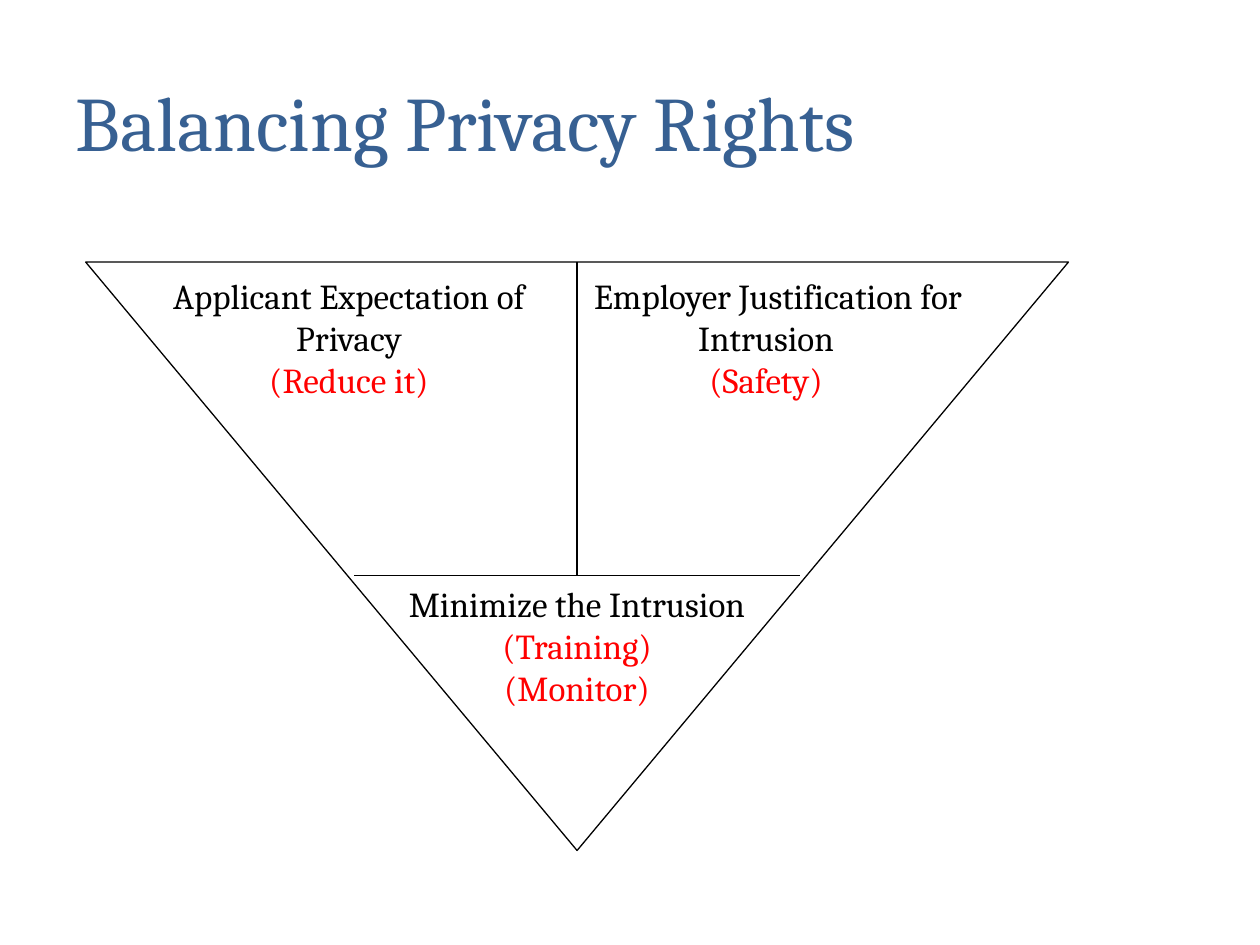
from pptx import Presentation
from pptx.dml.color import RGBColor
from pptx.enum.shapes import MSO_CONNECTOR, MSO_SHAPE
from pptx.enum.text import MSO_ANCHOR, PP_ALIGN
from pptx.oxml.ns import qn
from pptx.util import Inches, Pt
from lxml.etree import SubElement

BLUE = RGBColor(0x37, 0x60, 0x92)
BLACK = RGBColor(0, 0, 0)
RED = RGBColor(0xFF, 0, 0)
WHITE = RGBColor(0xFF, 0xFF, 0xFF)
FONT = "Cambria"

deck = Presentation()
deck.slide_width, deck.slide_height = Inches(10), Inches(7.5)
page = deck.slides.add_slide(deck.slide_layouts[5])

title = page.shapes.title
title.left, title.top = Inches(0.5), Inches(0.33)
title.width, title.height = Inches(9), Inches(1.25)
title.text_frame.text = "Balancing Privacy Rights"
title.text_frame.vertical_anchor = MSO_ANCHOR.MIDDLE
heading = title.text_frame.paragraphs[0]
heading.alignment = PP_ALIGN.LEFT
heading.font.size = Pt(44)
heading.font.name = FONT
heading.font.color.rgb = BLUE

left, top, width, height = 0.68, 2.08, 7.8, 4.67
center = left + width / 2
divider = 4.57
half_divider = 1.77

triangle = page.shapes.add_shape(
    MSO_SHAPE.ISOSCELES_TRIANGLE, Inches(left), Inches(top), Inches(width), Inches(height))
triangle.rotation = 180
triangle.shadow.inherit = False
triangle.fill.solid()
triangle.fill.fore_color.rgb = WHITE
triangle.line.color.rgb = BLACK
triangle.line.width = Pt(0.75)

for x1, y1, x2, y2 in [
    (center, top, center, divider),
    (center - half_divider, divider, center + half_divider, divider),
]:
    line = page.shapes.add_connector(
        MSO_CONNECTOR.STRAIGHT, Inches(x1), Inches(y1), Inches(x2), Inches(y2))
    line.line.color.rgb = BLACK
    line.line.width = Pt(0.75)
    SubElement(line._element.spPr, qn("a:effectLst"))

sections = [
    (1, 2.13, 1.6, 0, ["Applicant Expectation of Privacy", "(Reduce it)"]),
    (4.31, 2.13, 1.6, 0.19, ["Employer Justification for Intrusion", "(Safety)"]),
    (center - half_divider, divider, 2.18, 0, ["Minimize the Intrusion", "(Training)", "(Monitor)"]),
]
for box_left, box_top, box_height, first_indent, lines in sections:
    box = page.shapes.add_textbox(
        Inches(box_left), Inches(box_top), Inches(2 * half_divider), Inches(box_height))
    frame = box.text_frame
    frame.word_wrap = True
    frame.text = "\n".join(lines)
    for index, para in enumerate(frame.paragraphs):
        para.alignment = PP_ALIGN.CENTER
        para.font.size = Pt(20)
        para.font.name = FONT
        para.font.color.rgb = RED if index else BLACK
    if first_indent:
        frame.paragraphs[0]._p.get_or_add_pPr().set("indent", str(Inches(first_indent)))

deck.save("out.pptx")
